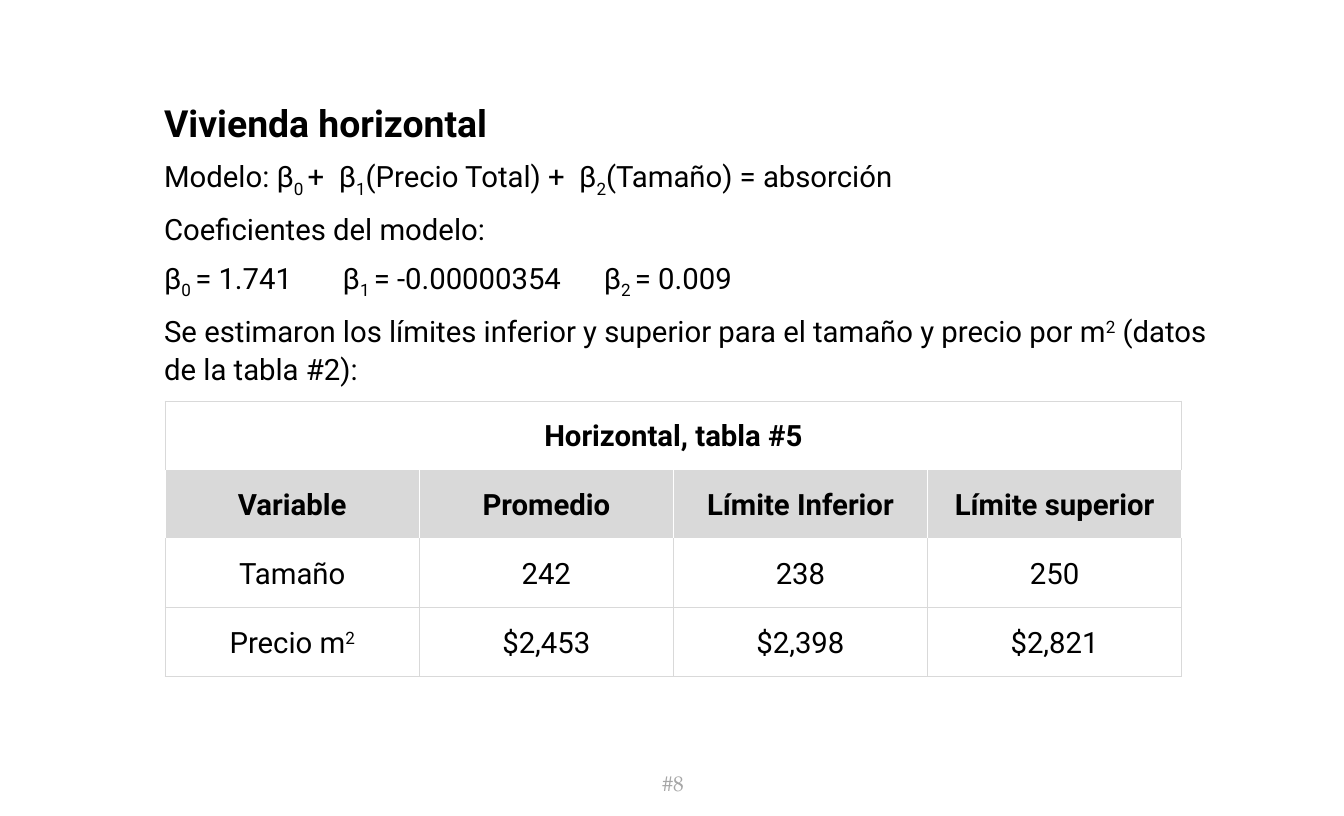
from typing import NamedTuple

from lxml import etree
from pptx import Presentation
from pptx import util as u
from pptx.dml.color import RGBColor
from pptx.enum import text
from pptx.oxml import ns

COLORS = {"ink": "000000", "grid": "D9D9D9", "white": "FFFFFF", "footer": "A6A6A6"}
BODY_FONT = "Roboto"
FOOTER_FONT = "TeX Gyre Pagella"
SUBSCRIPT, SUPERSCRIPT = -25, 30
COEFFICIENT_TABS = (1.86, 4.58)


class Piece(NamedTuple):
    content: str
    baseline: int = 0


class Style(NamedTuple):
    size: float = 22
    bold: bool = False
    color: str = "ink"
    font: str = BODY_FONT


class Line(NamedTuple):
    pieces: list[Piece]
    style: Style = Style()
    tabs: tuple[float, ...] = ()


class RowLook(NamedTuple):
    bold: bool = False
    fill: str | None = None
    side: str = "grid"
    top: str = "grid"
    bottom: str = "grid"


BODY = [
    Line([Piece("Vivienda horizontal")], Style(28, True)),
    Line([
        Piece("Modelo: β"), Piece("0 ", SUBSCRIPT),
        Piece("+  β"), Piece("1", SUBSCRIPT),
        Piece("(Precio Total) +  β"), Piece("2", SUBSCRIPT),
        Piece("(Tamaño) = absorción"),
    ]),
    Line([Piece("Coeficientes del modelo:")]),
    Line([
        Piece("β"), Piece("0 ", SUBSCRIPT),
        Piece("= 1.741\tβ"), Piece("1 ", SUBSCRIPT),
        Piece("= -0.00000354\tβ"), Piece("2 ", SUBSCRIPT),
        Piece("= 0.009"),
    ], tabs=COEFFICIENT_TABS),
    Line([
        Piece("Se estimaron los límites inferior y superior para el tamaño y precio por m"),
        Piece("2", SUPERSCRIPT),
        Piece(" (datos de la tabla #2):"),
    ]),
]

TABLE_ROWS = [
    [[Piece("Horizontal, tabla #5")]],
    [[Piece(name)] for name in ("Variable", "Promedio", "Límite Inferior", "Límite superior")],
    [[Piece(value)] for value in ("Tamaño", "242", "238", "250")],
    [[Piece("Precio m"), Piece("2", SUPERSCRIPT)]]
    + [[Piece(value)] for value in ("$2,453", "$2,398", "$2,821")],
]
ROW_LOOKS = [
    RowLook(bold=True),
    RowLook(bold=True, fill="grid", side="white", bottom="white"),
    RowLook(top="white"),
    RowLook(),
]


def write_pieces(paragraph, pieces: list[Piece], style: Style) -> None:
    for piece in pieces:
        run = paragraph.add_run()
        run.text = piece.content
        run.font.size = u.Pt(style.size)
        run.font.bold = style.bold
        run.font.name = style.font
        run.font.color.rgb = RGBColor.from_string(COLORS[style.color])
        if piece.baseline:
            run.font._element.set("baseline", str(piece.baseline * 1000))


def space_paragraph(paragraph) -> None:
    paragraph.line_spacing = 1.07
    paragraph.space_after = u.Pt(8)


def set_tabs(paragraph, positions: tuple[float, ...]) -> None:
    tab_list = etree.SubElement(paragraph._p.get_or_add_pPr(), ns.qn("a:tabLst"))
    for position in positions:
        etree.SubElement(tab_list, ns.qn("a:tab"), pos=str(u.Inches(position)), algn="l")


def add_text_frame(slide, box: tuple[float, ...], margins: tuple[float, ...]):
    frame = slide.shapes.add_textbox(*map(u.Inches, box)).text_frame
    frame.word_wrap = True
    frame.margin_left, frame.margin_top, frame.margin_right, frame.margin_bottom = map(
        u.Inches, margins)
    return frame


def add_body(slide) -> None:
    frame = add_text_frame(slide, (1.57, 0.94, 11.26, 3.05), (0.14, 0.07, 0.14, 0.07))
    for index, line in enumerate(BODY):
        paragraph = frame.add_paragraph() if index else frame.paragraphs[0]
        space_paragraph(paragraph)
        if line.tabs:
            set_tabs(paragraph, line.tabs)
        write_pieces(paragraph, line.pieces, line.style)


def set_borders(cell, look: RowLook) -> None:
    properties = cell._tc.get_or_add_tcPr()
    edges = {"lnL": look.side, "lnR": look.side, "lnT": look.top, "lnB": look.bottom}
    for index, (edge, color) in enumerate(edges.items()):
        border = etree.Element(ns.qn(f"a:{edge}"), w=str(u.Pt(1)))
        fill = etree.SubElement(border, ns.qn("a:solidFill"))
        etree.SubElement(fill, ns.qn("a:srgbClr"), val=COLORS[color])
        properties.insert(index, border)


def format_cell(cell, look: RowLook) -> None:
    cell.vertical_anchor = text.MSO_ANCHOR.MIDDLE
    cell.margin_left = cell.margin_right = u.Inches(0.07)
    cell.margin_top = cell.margin_bottom = 0
    if look.fill:
        cell.fill.solid()
        cell.fill.fore_color.rgb = RGBColor.from_string(COLORS[look.fill])
    else:
        cell.fill.background()
    set_borders(cell, look)


def add_limits_table(slide) -> None:
    box = map(u.Inches, (1.72, 4.18, 10.59, 2.87))
    table = slide.shapes.add_table(len(TABLE_ROWS), 4, *box).table
    table.first_row = table.horz_banding = False
    table.cell(0, 0).merge(table.cell(0, 3))
    for row, cells, look in zip(table.rows, TABLE_ROWS, ROW_LOOKS):
        for cell in row.cells:
            format_cell(cell, look)
        for cell, pieces in zip(row.cells, cells):
            paragraph = cell.text_frame.paragraphs[0]
            paragraph.alignment = text.PP_ALIGN.CENTER
            space_paragraph(paragraph)
            write_pieces(paragraph, pieces, Style(bold=look.bold))


def add_page_number(slide) -> None:
    frame = add_text_frame(slide, (6.51, 8.04, 0.98, 0.26), (0.12, 0.02, 0.1, 0.05))
    frame.vertical_anchor = text.MSO_ANCHOR.MIDDLE
    paragraph = frame.paragraphs[0]
    paragraph.alignment = text.PP_ALIGN.CENTER
    write_pieces(paragraph, [Piece("#8")], Style(16, color="footer", font=FOOTER_FONT))


def main() -> None:
    presentation = Presentation()
    presentation.slide_width = u.Inches(14)
    presentation.slide_height = u.Inches(8.5)
    slide = presentation.slides.add_slide(presentation.slide_layouts[6])
    add_page_number(slide)
    add_body(slide)
    add_limits_table(slide)
    presentation.save("out.pptx")


if __name__ == "__main__":
    main()
